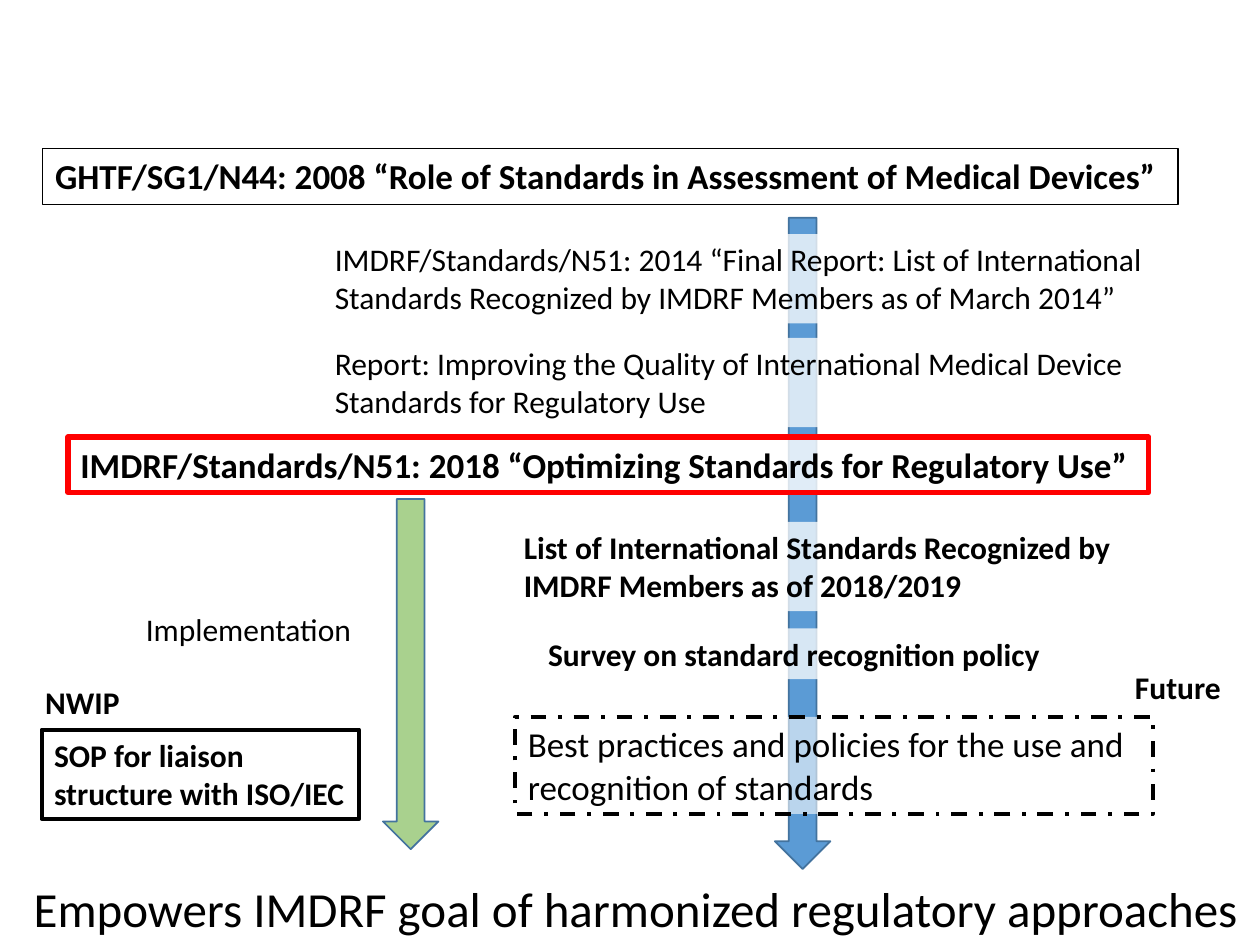
"""Build a slide tracing medical device standards guidance from 2008 to future work."""
import pptx
import pptx.dml.color
import pptx.enum.dml
import pptx.enum.shapes
import pptx.enum.text
import pptx.oxml.ns
import pptx.util
from lxml import etree

Cm = pptx.util.Cm
RGBColor = pptx.dml.color.RGBColor
BLACK = RGBColor(0x00, 0x00, 0x00)
WHITE = RGBColor(0xFF, 0xFF, 0xFF)
RED = RGBColor(0xFF, 0x00, 0x00)
BLUE = RGBColor(0x5B, 0x9B, 0xD5)
GREEN = RGBColor(0xA9, 0xD1, 0x8E)
ARROW_OUTLINE = RGBColor(0x43, 0x73, 0x9E)
DASH_DOT = pptx.enum.dml.MSO_LINE.DASH_DOT


def add_arrow(left, top, height, color):
    shape = slide.shapes.add_shape(
        pptx.enum.shapes.MSO_SHAPE.DOWN_ARROW, Cm(left), Cm(top), Cm(1.12), Cm(height)
    )
    shape.shadow.inherit = False
    shape.fill.solid()
    shape.fill.fore_color.rgb = color
    shape.line.color.rgb = ARROW_OUTLINE
    shape.line.width = pptx.util.Pt(1)


def add_label(place, lines, size=18, bold=False, wrap=True, opacity=None, outline=None):
    box = slide.shapes.add_textbox(*(Cm(length) for length in place))
    if opacity:
        box.fill.solid()
        box.fill.fore_color.rgb = WHITE
        color = box.fill._xPr.find(".//" + pptx.oxml.ns.qn("a:srgbClr"))
        etree.SubElement(color, pptx.oxml.ns.qn("a:alpha"), val=str(opacity * 1000))
    if outline:
        line_color, line_width, dash = outline
        box.line.color.rgb = line_color
        box.line.width = pptx.util.Pt(line_width)
        if dash:
            box.line.dash_style = dash
    frame = box.text_frame
    frame.word_wrap = wrap
    frame.auto_size = pptx.enum.text.MSO_AUTO_SIZE.SHAPE_TO_FIT_TEXT
    for index, line in enumerate(lines):
        paragraph = frame.add_paragraph() if index else frame.paragraphs[0]
        run = paragraph.add_run()
        run.text = line
        run.font.name = "Calibri"
        run.font.size = pptx.util.Pt(size)
        run.font.bold = bold
        run.font.color.rgb = BLACK


presentation = pptx.Presentation()
presentation.slide_width = Cm(25.4)
presentation.slide_height = Cm(19.05)
slide = presentation.slides.add_slide(presentation.slide_layouts[6])

add_arrow(15.62, 4.39, 13.13, BLUE)
add_label((0.86, 3, 22.89, 1.12),
          ["GHTF/SG1/N44: 2008 “Role of Standards in Assessment of Medical Devices”"],
          size=20, bold=True, wrap=False, outline=(BLACK, 0.75, None))
add_label((6.5, 4.72, 17.88, 1.8),
          ["IMDRF/Standards/N51: 2014 “Final Report: List of International "
           "Standards Recognized by IMDRF Members as of March 2014”"], opacity=76)
add_label((6.5, 6.81, 18.24, 1.8),
          ["Report: Improving the Quality of International Medical Device",
           "Standards for Regulatory Use"], opacity=76)
add_label((1.37, 8.81, 21.79, 1.12),
          ["IMDRF/Standards/N51: 2018 “Optimizing Standards for Regulatory Use”"],
          size=20, bold=True, wrap=False, opacity=81, outline=(RED, 3, None))
add_label((10.31, 10.52, 12.88, 1.8),
          ["List of International Standards Recognized by IMDRF Members as of 2018/2019"],
          bold=True, opacity=76)
add_arrow(7.72, 10.06, 7.06, GREEN)
add_label((10.39, 14.45, 12.85, 1.96),
          ["Best practices and policies for the use and recognition of standards"],
          size=20, opacity=58, outline=(BLACK, 2.25, DASH_DOT))
add_label((2.69, 12.17, 4.7, 1.02), ["Implementation"], wrap=False)
add_label((0.66, 13.64, 2.03, 1.02), ["NWIP"], bold=True, wrap=False)
add_label((0.84, 14.71, 6.4, 1.8), ["SOP for liaison structure with ISO/IEC"],
          bold=True, outline=(BLACK, 2.25, None))
add_label((10.8, 12.67, 10.77, 1.02), ["Survey on standard recognition policy"],
          bold=True, opacity=76)
add_label((22.63, 13.34, 2.26, 1.02), ["Future"], bold=True, wrap=False)
add_label((0.43, 17.58, 24.97, 1.45),
          ["Empowers IMDRF goal of harmonized regulatory approaches"], size=28)

presentation.save("out.pptx")
